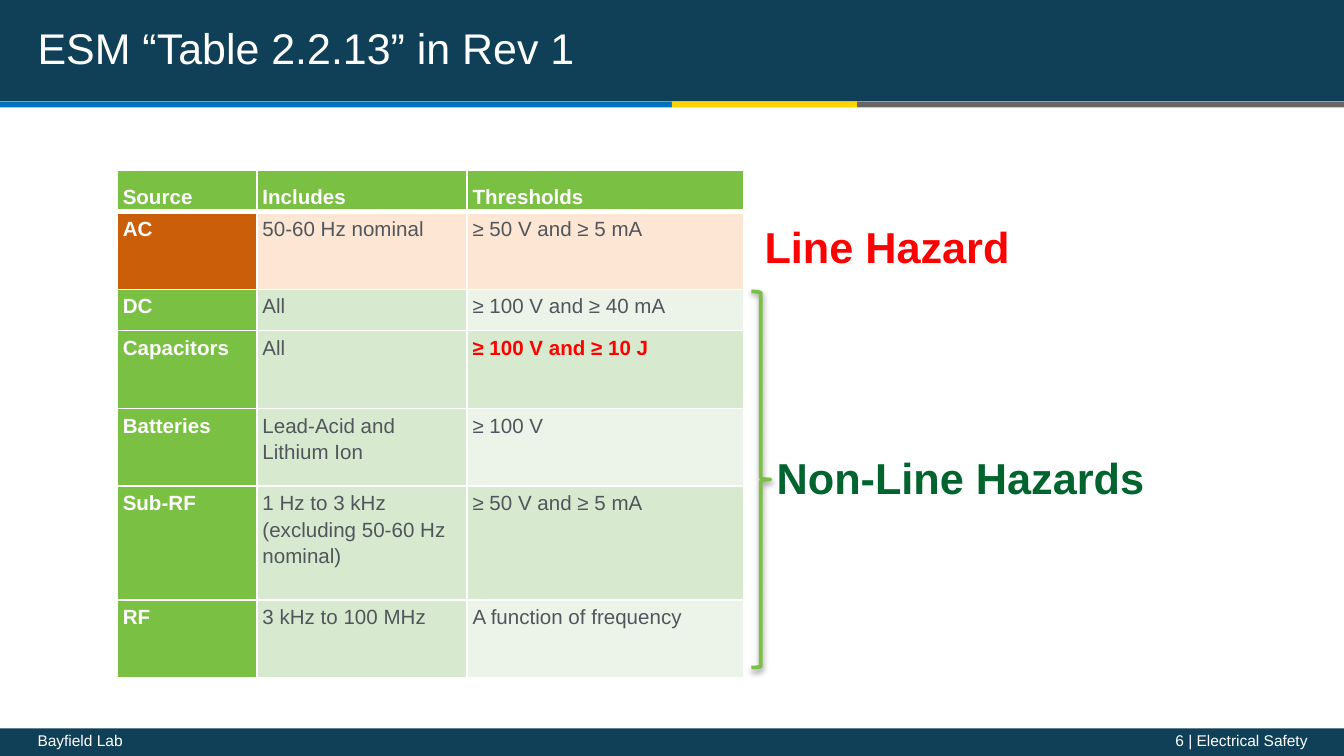
from dataclasses import dataclass

from lxml.etree import SubElement
from pptx import Presentation
from pptx.dml.color import RGBColor as RGB
from pptx.enum.shapes import MSO_SHAPE as Shape
from pptx.enum.text import MSO_ANCHOR as Anchor, MSO_AUTO_SIZE as Fit, PP_ALIGN as Align
from pptx.oxml.ns import qn
from pptx.util import Cm, Pt


@dataclass(frozen=True)
class Theme:
    font: str = "Arial"
    navy: str = "0F4058"
    blue: str = "0071BC"
    gold: str = "FFD200"
    gray: str = "666666"
    white: str = "FFFFFF"
    black: str = "000000"
    ink: str = "50565C"
    red: str = "FF0000"
    forest: str = "00642F"
    leaf: str = "7AC143"
    sage: str = "D7E9CF"
    mint: str = "ECF4E9"
    rust: str = "CA5E09"
    peach: str = "FDE6D3"
    title: float = 23
    label: float = 23.2
    body: float = 11
    foot: float = 8.3


WIDE, HIGH = 25.4, 14.29
BAND, STRIPE, FOOT = 1.92, 0.11, 0.52
COLS = (2.64, 3.97, 5.23)
ROWS = (
    (0.78, "Source", "Includes", "Thresholds"),
    (1.47, "AC", "50-60 Hz nominal", "≥ 50 V and ≥ 5 mA"),
    (0.78, "DC", "All", "≥ 100 V and ≥ 40 mA"),
    (1.47, "Capacitors", "All", "≥ 100 V and ≥ 10 J"),
    (1.47, "Batteries", "Lead-Acid and Lithium Ion", "≥ 100 V"),
    (2.15, "Sub-RF", "1 Hz to 3 kHz (excluding 50-60 Hz nominal)", "≥ 50 V and ≥ 5 mA"),
    (1.47, "RF", "3 kHz to 100 MHz", "A function of frequency"),
)
LIMIT = (3, 2)  # the threshold to stress


class Painter:
    def __init__(self, slide, theme):
        self.slide, self.theme = slide, theme

    def put(self, frame, text, size, color, bold=False, align=Align.LEFT):
        """Add a styled run to the first paragraph and return the paragraph."""
        para = frame.paragraphs[0]
        para.alignment = align
        run = para.add_run()
        run.text = text
        font = run.font
        font.name, font.size, font.bold = self.theme.font, Pt(size), bold
        font.color.rgb = RGB.from_string(color)
        return para

    def inset(self, box, side, end):
        box.margin_left = box.margin_right = Cm(side)
        box.margin_top = box.margin_bottom = Cm(end)

    def bar(self, left, top, width, height, color):
        shape = self.slide.shapes.add_shape(
            Shape.RECTANGLE, Cm(left), Cm(top), Cm(width), Cm(height))
        shape.shadow.inherit = False
        shape.fill.solid()
        shape.fill.fore_color.rgb = RGB.from_string(color)
        shape.line.fill.background()

    def title(self, text):
        shape = self.slide.shapes.title
        shape.element.getparent().append(shape.element)  # above the bars
        shape.left, shape.top, shape.width, shape.height = Cm(0.48), Cm(0), Cm(21.2), Cm(1.88)
        frame = shape.text_frame
        frame.vertical_anchor, frame.auto_size = Anchor.MIDDLE, Fit.NONE
        self.inset(frame, 0.23, 0.1)
        para = self.put(frame, text, self.theme.title, self.theme.white)
        para.line_spacing = Pt(25)

    def box(self, left, top, width, height, wrap):
        shape = self.slide.shapes.add_textbox(Cm(left), Cm(top), Cm(width), Cm(height))
        shape.text_frame.word_wrap = wrap
        return shape.text_frame

    def footer(self, left, width, text, align):
        frame = self.box(left, 13.79, width, 0.5, True)
        self.inset(frame, 0.23, 0.1)
        para = self.put(frame, text, self.theme.foot, self.theme.white, align=align)
        para.line_spacing = 0.8
        para.space_before = Pt(self.theme.foot / 5)

    def label(self, left, top, width, text, color):
        frame = self.box(left, top, width, 1.65, False)
        para = self.put(frame, text, self.theme.label, color, True)
        para.space_before = Pt(self.theme.label / 5)

    def brace(self, left, top, width, height):
        shape = self.slide.shapes.add_shape(
            Shape.RIGHT_BRACE, Cm(left), Cm(top), Cm(width), Cm(height))
        shape.fill.background()
        shape.line.color.rgb = RGB.from_string(self.theme.leaf)
        shape.line.width = Pt(2)
        shape.shadow.inherit = False
        effects = shape.element.spPr.find(qn("a:effectLst"))
        shade = SubElement(effects, qn("a:outerShdw"), blurRad=str(Pt(3.1)),
                           dist=str(Pt(1.6)), dir="5400000", rotWithShape="0")
        color = SubElement(shade, qn("a:srgbClr"), val=self.theme.black)
        SubElement(color, qn("a:alpha"), val="38000")

    def look(self, row, col):
        """Return the fill, text colour and weight of a table cell."""
        t = self.theme
        if row == 0 or col == 0:
            return (t.rust if row == 1 else t.leaf), t.white, True
        if row == 1:
            return t.peach, t.ink, False
        fill = t.mint if col == 2 and row % 2 == 0 else t.sage
        stress = (row, col) == LIMIT
        return fill, t.red if stress else t.ink, stress

    def edges(self, cell, row):
        """Draw white cell borders, thicker under the header row."""
        props = cell._tc.get_or_add_tcPr()
        for spot, name in enumerate(("lnL", "lnR", "lnT", "lnB")):
            thick = (row, name) in ((0, "lnB"), (1, "lnT"))
            line = props.makeelement(qn("a:" + name), {"w": str(Pt(3 if thick else 1))})
            fill = SubElement(line, qn("a:solidFill"))
            SubElement(fill, qn("a:srgbClr"), val=self.theme.white)
            props.insert(spot, line)

    def table(self, left, top, cols, rows):
        high = sum(row[0] for row in rows)
        grid = self.slide.shapes.add_table(
            len(rows), len(cols), Cm(left), Cm(top), Cm(sum(cols)), Cm(high)).table
        grid.horz_banding = False
        for col, width in enumerate(cols):
            grid.columns[col].width = Cm(width)
        for row, (height, *texts) in enumerate(rows):
            grid.rows[row].height = Cm(height)
            for col, text in enumerate(texts):
                cell = grid.cell(row, col)
                fill, color, bold = self.look(row, col)
                cell.fill.solid()
                cell.fill.fore_color.rgb = RGB.from_string(fill)
                cell.vertical_anchor = Anchor.TOP if row else Anchor.BOTTOM
                self.inset(cell, 0.1, 0.05)
                para = self.put(cell.text_frame, text, self.theme.body, color, bold)
                para.line_spacing, para.space_after = 1.15, Pt(10)
                self.edges(cell, row)


def main():
    deck = Presentation()
    deck.slide_width, deck.slide_height = Cm(WIDE), Cm(HIGH)
    theme = Theme()
    page = Painter(deck.slides.add_slide(deck.slide_layouts[5]), theme)

    page.bar(0, 0, WIDE, BAND, theme.navy)
    page.bar(0, HIGH - FOOT, WIDE, FOOT, theme.navy)
    left = 0
    for width, color in ((12.7, theme.blue), (3.5, theme.gold), (9.2, theme.gray)):
        page.bar(left, BAND, width, STRIPE, color)
        left += width
    page.footer(21.34, 3.6, "6 | Electrical Safety", Align.RIGHT)
    page.footer(0.48, 3.78, "Bayfield Lab", Align.LEFT)

    page.table(2.22, 3.22, COLS, ROWS)
    page.title("ESM “Table 2.2.13” in Rev 1")
    page.label(14.2, 4.04, 6.22, "Line Hazard", theme.red)
    page.label(14.43, 8.41, 8.38, "Non-Line Hazards", theme.forest)
    page.brace(14.2, 5.51, 0.36, 7.11)
    deck.save("out.pptx")


if __name__ == "__main__":
    main()
